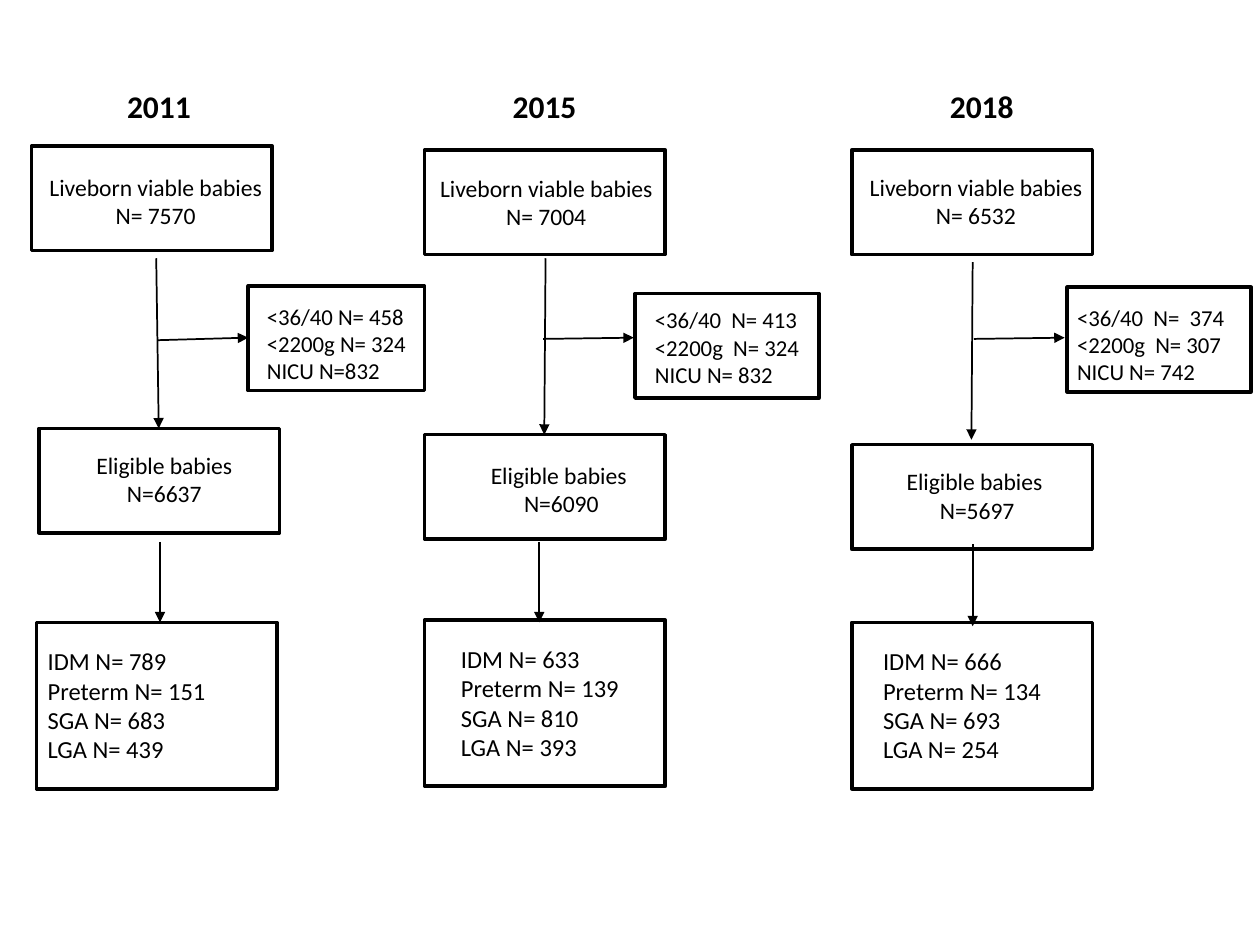
from dataclasses import dataclass

import pptx
import pptx.dml.color
import pptx.enum.shapes
import pptx.enum.text
import pptx.oxml.ns
import pptx.util
from lxml import etree

Inches = pptx.util.Inches
Align = pptx.enum.text.PP_ALIGN
Point = tuple[float, float]

COLORS = {"ink": "000000"}
FONT = "Calibri"
WIDE = 1.91
LOW = 0.83


@dataclass
class Step:
    box: Point
    text: Point
    lines: list[str]


@dataclass
class Arrow:
    start: Point
    end: Point


@dataclass
class Cohort:
    year: str
    left: float
    born: Step
    out: Step
    fit: Step
    group: Step
    out_width: float
    note_width: float
    arrows: list[Arrow]


COHORTS = [
    Cohort(
        "2011", 0.91,
        Step((0.25, 1.16), (0.28, 1.32), ["Liveborn viable babies N= 7570"]),
        Step((1.97, 2.27), (2.02, 2.35),
             ["<36/40 N= 458", "<2200g N= 324", "NICU N=832"]),
        Step((0.31, 3.4), (0.37, 3.53), ["Eligible babies ", "N=6637 "]),
        Step((0.29, 4.94), (0.28, 5.08),
             ["IDM N= 789", "Preterm N= 151", "SGA N= 683", "LGA N= 439"]),
        1.4, 1.36,
        [Arrow((1.24, 2.05), (1.26, 3.4)),
         Arrow((1.25, 2.7), (1.97, 2.68)),
         Arrow((1.27, 4.3), (1.27, 4.94))],
    ),
    Cohort(
        "2015", 3.97,
        Step((3.37, 1.19), (3.38, 1.33), ["Liveborn viable babies N= 7004"]),
        Step((5.04, 2.33), (5.1, 2.38),
             ["<36/40  N= 413", "<2200g  N= 324", "NICU N= 832"]),
        Step((3.37, 3.45), (3.5, 3.61), ["Eligible babies ", "N=6090"]),
        Step((3.37, 4.92), (3.56, 5.06),
             ["IDM N= 633", "Preterm N= 139", "SGA N= 810", "LGA N= 393"]),
        1.46, 1.43,
        [Arrow((4.33, 2.05), (4.32, 3.45)),
         Arrow((4.31, 2.69), (5.03, 2.68)),
         Arrow((4.28, 4.3), (4.28, 4.94))],
    ),
    Cohort(
        "2018", 7.44,
        Step((6.76, 1.19), (6.79, 1.32), ["Liveborn viable babies N= 6532"]),
        Step((8.47, 2.28), (8.45, 2.36),
             ["<36/40  N=  374", "<2200g  N= 307", "NICU N= 742"]),
        Step((6.76, 3.53), (6.8, 3.66), ["Eligible babies ", "N=5697"]),
        Step((6.76, 4.94), (6.91, 5.08),
             ["IDM N= 666", "Preterm N= 134", "SGA N= 693", "LGA N= 254"]),
        1.46, 1.43,
        [Arrow((7.72, 2.08), (7.71, 3.49)),
         Arrow((7.73, 2.69), (8.45, 2.68)),
         Arrow((7.72, 4.32), (7.72, 4.97))],
    ),
]


def ink() -> pptx.dml.color.RGBColor:
    return pptx.dml.color.RGBColor.from_string(COLORS["ink"])


def draw_box(slide, spot: Point, width: float, height: float) -> None:
    box = slide.shapes.add_shape(
        pptx.enum.shapes.MSO_SHAPE.RECTANGLE,
        *map(Inches, (*spot, width, height)))
    box.shadow.inherit = False
    box.fill.background()
    box.line.color.rgb = ink()
    box.line.width = pptx.util.Pt(2)


def draw_text(slide, spot: Point, width: float, height: float,
              lines: list[str], size: float, align=Align.LEFT,
              bold: bool = False, wrap: bool = True) -> None:
    label = slide.shapes.add_textbox(*map(Inches, (*spot, width, height)))
    frame = label.text_frame
    frame.text = "\n".join(lines)
    frame.word_wrap = wrap
    frame.auto_size = pptx.enum.text.MSO_AUTO_SIZE.SHAPE_TO_FIT_TEXT
    for line in frame.paragraphs:
        line.alignment = align
        for run in line.runs:
            run.font.name = FONT
            run.font.size = pptx.util.Pt(size)
            run.font.bold = bold
            run.font.color.rgb = ink()


def draw_arrow(slide, arrow: Arrow) -> None:
    link = slide.shapes.add_connector(
        pptx.enum.shapes.MSO_CONNECTOR.STRAIGHT,
        *map(Inches, (*arrow.start, *arrow.end)))
    link.line.color.rgb = ink()
    link.line.width = pptx.util.Pt(1)
    qn = pptx.oxml.ns.qn
    etree.SubElement(link.line._get_or_add_ln(), qn("a:tailEnd"),
                     type="triangle")
    etree.SubElement(link._element.spPr, qn("a:effectLst"))


def draw_cohort(slide, group: Cohort) -> None:
    draw_text(slide, (group.left, 0.64), 0.71, 0.4, [group.year], 18,
              bold=True, wrap=False)
    for step in (group.born, group.fit):
        draw_box(slide, step.box, WIDE, LOW)
        draw_text(slide, step.text, WIDE, 0.56, step.lines, 13.5,
                  Align.CENTER)
    draw_box(slide, group.out.box, group.out_width, LOW)
    draw_text(slide, group.out.text, group.note_width, 0.76,
              group.out.lines, 13)
    draw_box(slide, group.group.box, WIDE, 1.32)
    draw_text(slide, group.group.text, 1.78, 1.04, group.group.lines, 14)
    for arrow in group.arrows:
        draw_arrow(slide, arrow)


def main() -> None:
    deck = pptx.Presentation()
    deck.slide_width = Inches(10)
    deck.slide_height = Inches(7.5)
    slide = deck.slides.add_slide(deck.slide_layouts[6])
    for group in COHORTS:
        draw_cohort(slide, group)
    deck.save("out.pptx")


if __name__ == "__main__":
    main()
